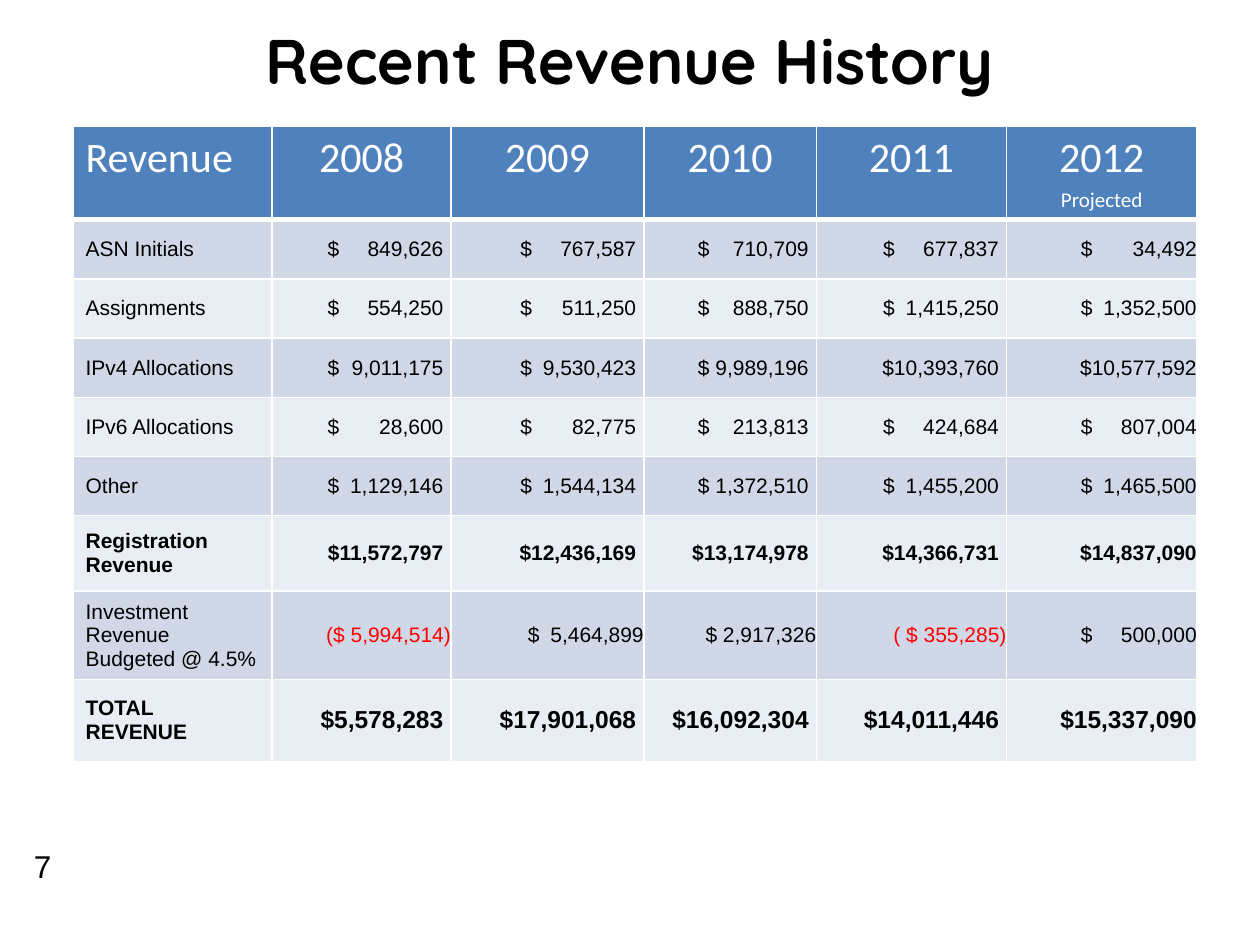
import pptx
import pptx.util
import pptx.dml.color
import pptx.enum.text
import pptx.oxml
import pptx.oxml.ns

Inches = pptx.util.Inches
Pt = pptx.util.Pt
RGB = pptx.dml.color.RGBColor
ALIGN = pptx.enum.text.PP_ALIGN
ANCHOR = pptx.enum.text.MSO_ANCHOR

# Colours
BLACK = RGB(0, 0, 0)
WHITE = RGB(255, 255, 255)
RED = RGB(255, 0, 0)
BLUE = RGB(0x4F, 0x81, 0xBD)
BANDS = [RGB(0xE9, 0xED, 0xF4), RGB(0xD0, 0xD8, 0xE8)]

# Grid in inches; SPANS is the width from dollar sign to last digit
COLS = [1.58, 1.42, 1.53, 1.37, 1.51, 1.51]
ROWS = [0.74] + [0.47] * 5 + [0.6, 0.7, 0.65]
SPANS = [0, 0.92, 0.92, 0.88, 0.92, 0.92]
GAP = 0.06

# A tab parts the dollar sign from a right-set amount
HEAD = ["Revenue", "2008", "2009", "2010", "2011", "2012\nProjected"]
BODY = [
    ["ASN Initials", "$\t849,626", "$\t767,587", "$\t710,709", "$\t677,837", "$\t34,492"],
    ["Assignments", "$\t554,250", "$\t511,250", "$\t888,750", "$\t1,415,250", "$\t1,352,500"],
    ["IPv4 Allocations", "$\t9,011,175", "$\t9,530,423", "$\t9,989,196",
     "$10,393,760", "$10,577,592"],
    ["IPv6 Allocations", "$\t28,600", "$\t82,775", "$\t213,813", "$\t424,684", "$\t807,004"],
    ["Other", "$\t1,129,146", "$\t1,544,134", "$\t1,372,510", "$\t1,455,200", "$\t1,465,500"],
    ["Registration Revenue", "$11,572,797", "$12,436,169", "$13,174,978",
     "$14,366,731", "$14,837,090"],
    ["Investment Revenue\nBudgeted @ 4.5%", "($ 5,994,514)", "$\t5,464,899",
     "$\t2,917,326", "( $ 355,285)", "$\t500,000"],
    ["TOTAL\vREVENUE", "$5,578,283", "$17,901,068", "$16,092,304",
     "$14,011,446", "$15,337,090"],
]
BOLD = (6, 8)
INVEST, TOTAL = 7, 8


def style(para, size, face, color, bold=False):
    for run in para.runs:
        font = run.font
        font.size, font.name, font.bold = Pt(size), face, bold
        font.color.rgb = color


def edge(cell, row):
    """White rules, with a thick one under the head."""
    widths = {"L": 1, "R": 1, "T": 3 if row == 1 else 1, "B": 3 if row == 0 else 1}
    props = cell._tc.get_or_add_tcPr()
    for side, width in widths.items():
        props.append(pptx.oxml.parse_xml(
            f'<a:ln{side} {pptx.oxml.ns.nsdecls("a")} w="{Pt(width)}">'
            f'<a:solidFill><a:srgbClr val="{WHITE}"/></a:solidFill></a:ln{side}>'))


def add_tab(para, span):
    para._p.get_or_add_pPr().append(pptx.oxml.parse_xml(
        f'<a:tabLst {pptx.oxml.ns.nsdecls("a")}>'
        f'<a:tab pos="{Inches(span)}" algn="r"/></a:tabLst>'))


def fill_cell(cell, text, row, color):
    edge(cell, row)
    cell.fill.solid()
    cell.fill.fore_color.rgb = color
    cell.text_frame.text = text


def head_cell(cell, text, col):
    fill_cell(cell, text, 0, BLUE)
    for num, para in enumerate(cell.text_frame.paragraphs):
        para.alignment = ALIGN.CENTER if col else ALIGN.LEFT
        if num:
            para.space_before = Pt(2.4)
        style(para, 12 if num else 24, "Calibri", WHITE)


def body_cell(cell, text, row, col):
    fill_cell(cell, text, row, BANDS[row % 2])
    cell.vertical_anchor = ANCHOR.MIDDLE
    if col:
        flush = row == INVEST or col == len(COLS) - 1
        right = 0 if flush else GAP
        cell.margin_top = cell.margin_bottom = 0
        cell.margin_right = Inches(right)
        cell.margin_left = 0
    for para in cell.text_frame.paragraphs:
        if "\t" in text:
            cell.margin_left = Inches(COLS[col] - SPANS[col] - right)
            para.alignment = ALIGN.LEFT
            add_tab(para, SPANS[col])
        elif col:
            para.alignment = ALIGN.RIGHT
        size = 14 if col and row == TOTAL else 12
        style(para, size, "Arial", RED if "(" in text else BLACK, row in BOLD)


def add_grid(slide):
    frame = slide.shapes.add_table(len(ROWS), len(COLS), Inches(0.58), Inches(1),
                                   Inches(sum(COLS)), Inches(sum(ROWS)))
    table = frame.table
    for col, width in enumerate(COLS):
        table.columns[col].width = Inches(width)
    for row, height in enumerate(ROWS):
        table.rows[row].height = Inches(height)
    for col, text in enumerate(HEAD):
        head_cell(table.cell(0, col), text, col)
    for row, line in enumerate(BODY, 1):
        for col, text in enumerate(line):
            body_cell(table.cell(row, col), text, row, col)


def add_title(slide, text):
    title = slide.shapes.title
    title.left, title.top = Inches(0.5), Inches(0.08)
    title.width, title.height = Inches(9), Inches(0.78)
    frame = title.text_frame
    frame.text = text
    frame.vertical_anchor = ANCHOR.MIDDLE
    frame.paragraphs[0].alignment = ALIGN.CENTER
    style(frame.paragraphs[0], 36, "Quicksand", BLACK, True)


def add_page(slide, text):
    box = slide.shapes.add_textbox(Inches(0.17), Inches(6.67), Inches(0.34), Inches(0.4))
    frame = box.text_frame
    frame.text = text
    frame.word_wrap = False
    frame.auto_size = pptx.enum.text.MSO_AUTO_SIZE.SHAPE_TO_FIT_TEXT
    style(frame.paragraphs[0], 18, "Arial", BLACK)


def main():
    deck = pptx.Presentation()
    deck.slide_width, deck.slide_height = Inches(10), Inches(7.5)
    slide = deck.slides.add_slide(deck.slide_layouts[5])
    add_title(slide, "Recent Revenue History")
    add_grid(slide)
    add_page(slide, "7")
    deck.save("out.pptx")


if __name__ == "__main__":
    main()
